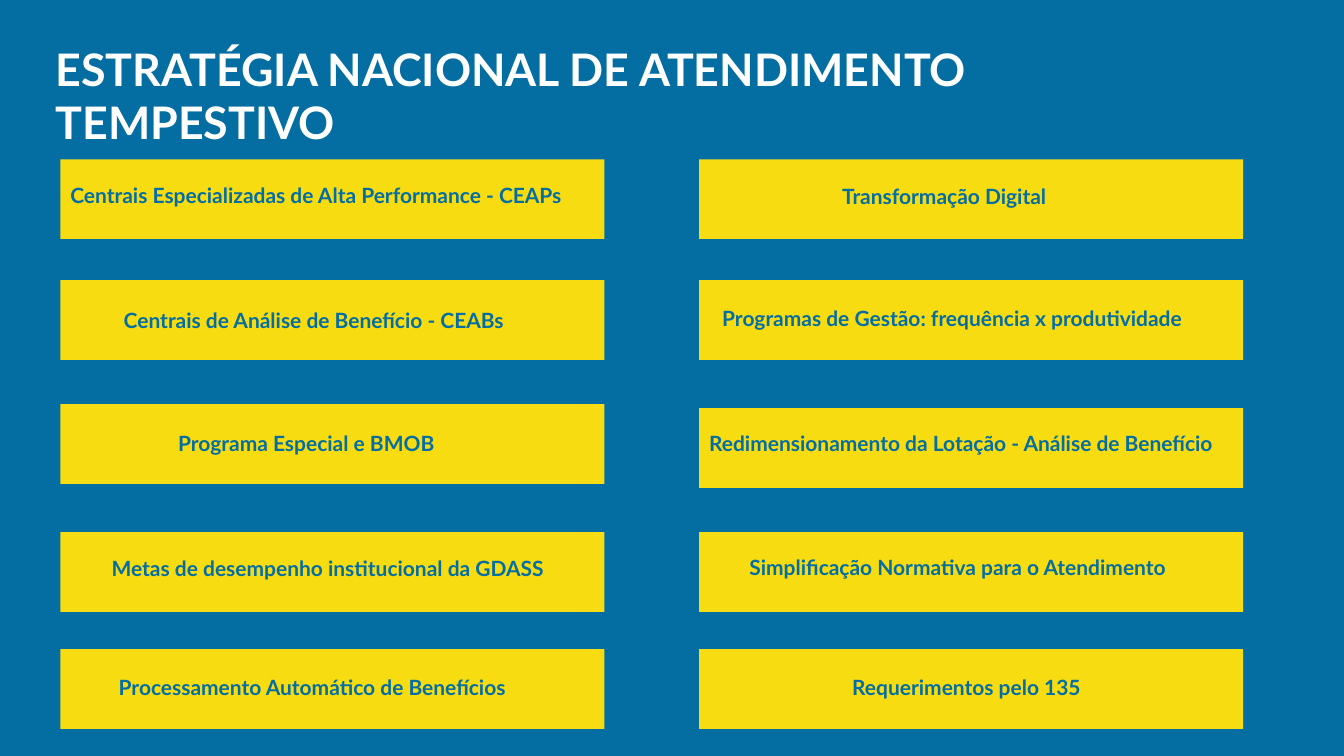
import pptx
import pptx.dml.color
import pptx.enum.shapes
import pptx.enum.text
import pptx.util

BLUE = pptx.dml.color.RGBColor(0x04, 0x6E, 0xA3)
YELLOW = pptx.dml.color.RGBColor(0xF8, 0xDC, 0x12)
WHITE = pptx.dml.color.RGBColor(0xFF, 0xFF, 0xFF)

PX = 9144  # 100 px to the inch
SLIDE_WIDTH, SLIDE_HEIGHT = 1334, 750
PANEL_WIDTH, PANEL_HEIGHT = 540, 79
LABEL_WIDTH, LABEL_HEIGHT = 566, 69

# Each column: panel left, then (panel top, label left, label top, label)
COLUMNS = [
    (60, [
        (158, 60, 176, "Centrais Especializadas de Alta Performance - CEAPs"),
        (278, 113, 300, "Centrais de Análise de Benefício - CEABs"),
        (401, 167, 422, "Programa Especial e BMOB"),
        (528, 101, 546, "Metas de desempenho institucional da GDASS"),
        (644, 108, 664, "Processamento Automático de Benefícios"),
    ]),
    (694, [
        (158, 826, 177, "Transformação Digital"),
        (278, 707, 298, "Programas de Gestão: frequência x produtividade"),
        (405, 694, 422, "Redimensionamento da Lotação - Análise de Benefício"),
        (528, 734, 545, "Simplificação Normativa para o Atendimento"),
        (644, 836, 664, "Requerimentos pelo 135"),
    ]),
]


def to_emu(*lengths):
    return [pptx.util.Emu(length * PX) for length in lengths]


def write_text(frame, text, *, size, color, font="Lato", bold=True):
    frame.word_wrap = True
    frame.auto_size = pptx.enum.text.MSO_AUTO_SIZE.NONE
    frame.vertical_anchor = pptx.enum.text.MSO_ANCHOR.TOP
    frame.margin_left, frame.margin_top, frame.margin_right, frame.margin_bottom = to_emu(10, 5, 10, 5)
    paragraph = frame.paragraphs[0]
    paragraph.alignment = pptx.enum.text.PP_ALIGN.LEFT
    paragraph.line_spacing = 1.0
    paragraph.space_before = pptx.util.Pt(0)
    run = paragraph.add_run()
    run.text = text
    run.font.name = font
    run.font.size = pptx.util.Pt(size)
    run.font.bold = bold
    run.font.color.rgb = color


def set_title(slide, text):
    title = slide.shapes.title
    title.left, title.top, title.width, title.height = to_emu(45, 36, 1189, 69)
    write_text(title.text_frame, text, size=32, color=WHITE)


def add_panel(slide, left, top):
    panel = slide.shapes.add_shape(
        pptx.enum.shapes.MSO_SHAPE.RECTANGLE,
        *to_emu(left, top, PANEL_WIDTH, PANEL_HEIGHT))
    panel.shadow.inherit = False
    panel.fill.solid()
    panel.fill.fore_color.rgb = YELLOW
    panel.line.fill.background()


def add_label(slide, left, top, text):
    width = min(LABEL_WIDTH, SLIDE_WIDTH - left)
    label = slide.shapes.add_textbox(*to_emu(left, top, width, LABEL_HEIGHT))
    write_text(label.text_frame, text, size=15, color=BLUE)


def main():
    deck = pptx.Presentation()
    deck.slide_width, deck.slide_height = to_emu(SLIDE_WIDTH, SLIDE_HEIGHT)
    slide = deck.slides.add_slide(deck.slide_layouts[5])
    slide.background.fill.solid()
    slide.background.fill.fore_color.rgb = BLUE

    set_title(slide, "ESTRATÉGIA NACIONAL DE ATENDIMENTO TEMPESTIVO")
    for panel_left, strategies in COLUMNS:
        for panel_top, label_left, label_top, text in strategies:
            add_panel(slide, panel_left, panel_top)
            add_label(slide, label_left, label_top, text)
    deck.save("out.pptx")


if __name__ == "__main__":
    main()
